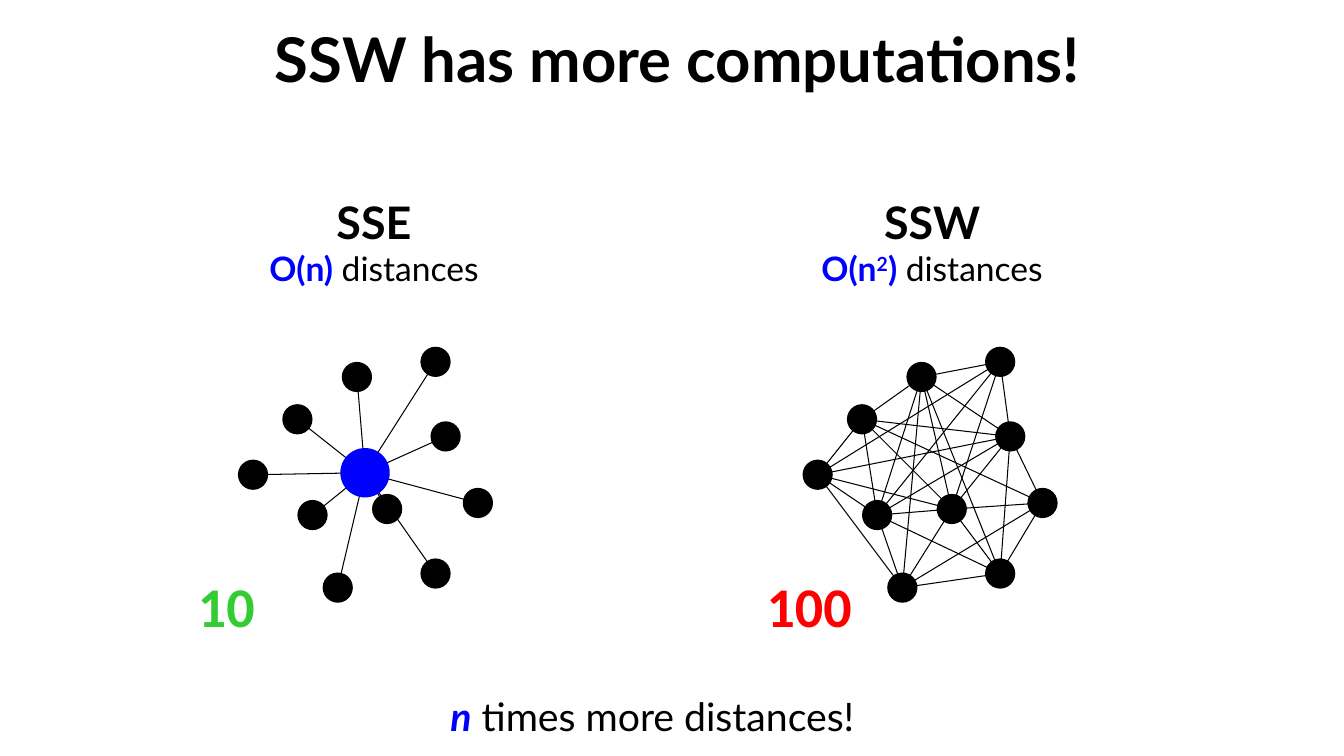
from dataclasses import dataclass

import lxml.etree
import pptx
import pptx.dml.color
import pptx.enum.shapes
import pptx.enum.text
import pptx.oxml.ns
import pptx.presentation
import pptx.shapes.autoshape
import pptx.slide
import pptx.text.text
import pptx.util

PX = 9144  # EMU in one px, 100 px to the inch

BLACK = pptx.dml.color.RGBColor(0x00, 0x00, 0x00)
BLUE = pptx.dml.color.RGBColor(0x00, 0x00, 0xFF)
GREEN = pptx.dml.color.RGBColor(0x33, 0xCC, 0x33)
RED = pptx.dml.color.RGBColor(0xFF, 0x00, 0x00)


@dataclass(frozen=True)
class Span:
    text: str
    size: int
    color: pptx.dml.color.RGBColor = BLACK
    bold: bool = True
    italic: bool = False
    superscript: bool = False
    font: str = "Lato"


@dataclass(frozen=True)
class Label:
    left: int
    top: int
    width: int
    height: int
    lines: tuple[tuple[Span, ...], ...]


@dataclass(frozen=True)
class Dot:
    x: int
    y: int
    size: int = 30
    color: pptx.dml.color.RGBColor = BLACK


@dataclass(frozen=True)
class Graph:
    shift: int
    dots: dict[str, Dot]
    links: dict[str, str]


TITLE = Label(43, 20, 1259, 74, ((Span("SSW has more computations!", 44),),))
DISTANCES = Span(" distances", 24, bold=False)
LABELS = (
    Label(248, 188, 246, 104, (
        (Span("SSE", 32),),
        (Span("O(n)", 24, BLUE), DISTANCES),
    )),
    Label(794, 188, 261, 104, (
        (Span("SSW", 32),),
        (Span("O(n", 24, BLUE), Span("2", 24, BLUE, superscript=True),
         Span(")", 24, BLUE), DISTANCES),
    )),
    Label(186, 562, 77, 77, ((Span("10", 40, GREEN, font="Calibri"),),)),
    Label(750, 562, 105, 77, ((Span("100", 40, RED, font="Calibri"),),)),
    Label(428, 682, 438, 57, (
        (Span("n", 28, BLUE, italic=True),
         Span(" times more distances!", 28, bold=False)),
    )),
)

POINTS = {
    "inner": Dot(384, 505),
    "upper": Dot(354, 374),
    "northwest": Dot(295, 416),
    "southwest": Dot(310, 511),
    "east": Dot(442, 433),
    "far_east": Dot(474, 499),
    "southeast": Dot(432, 569),
    "north": Dot(432, 359),
    "west": Dot(251, 471),
    "south": Dot(335, 583),
}
CENTROID = Dot(362, 469, 49, BLUE)
GRAPHS = (
    Graph(0, POINTS | {"centroid": CENTROID}, {"centroid": " ".join(POINTS)}),
    Graph(560, POINTS, {
        "north": "upper east southwest inner west",
        "upper": "northwest southwest inner east southeast south",
        "northwest": "west southwest inner east far_east",
        "west": "southwest south inner east",
        "southwest": "south southeast inner east",
        "inner": "south southeast east far_east",
        "east": "far_east southeast",
        "far_east": "southeast south",
        "southeast": "south",
    }),
)


def write_lines(frame: pptx.text.text.TextFrame, label: Label) -> None:
    for index, line in enumerate(label.lines):
        para = frame.add_paragraph() if index else frame.paragraphs[0]
        para.alignment = pptx.enum.text.PP_ALIGN.CENTER
        for span in line:
            run = para.add_run()
            run.text = span.text
            run.font.name = span.font
            run.font.size = pptx.util.Pt(span.size)
            run.font.bold = span.bold
            run.font.italic = span.italic
            run.font.color.rgb = span.color
            if span.superscript:
                run._r.get_or_add_rPr().set("baseline", "30000")


def add_title(page: pptx.slide.Slide, label: Label) -> None:
    title = page.shapes.title
    title.left, title.top = label.left * PX, label.top * PX
    title.width, title.height = label.width * PX, label.height * PX
    frame = title.text_frame
    frame.margin_left = frame.margin_right = 0
    frame.margin_top = frame.margin_bottom = 0
    frame.vertical_anchor = pptx.enum.text.MSO_ANCHOR.MIDDLE
    frame.auto_size = pptx.enum.text.MSO_AUTO_SIZE.SHAPE_TO_FIT_TEXT
    write_lines(frame, label)


def add_label(page: pptx.slide.Slide, label: Label) -> None:
    box = page.shapes.add_textbox(
        label.left * PX, label.top * PX, label.width * PX, label.height * PX)
    box.text_frame.word_wrap = False
    box.text_frame.auto_size = pptx.enum.text.MSO_AUTO_SIZE.SHAPE_TO_FIT_TEXT
    write_lines(box.text_frame, label)


def add_link(page: pptx.slide.Slide, start: Dot, end: Dot, shift: int) -> None:
    link = page.shapes.add_connector(
        pptx.enum.shapes.MSO_CONNECTOR.STRAIGHT,
        (start.x + shift) * PX, start.y * PX,
        (end.x + shift) * PX, end.y * PX)
    link.line.color.rgb = BLACK
    link.line.width = pptx.util.Pt(0.75)
    properties = link._element.spPr
    lxml.etree.SubElement(properties, pptx.oxml.ns.qn("a:effectLst"))


def add_dot(page: pptx.slide.Slide, dot: Dot, shift: int) -> None:
    size = dot.size * PX
    circle = page.shapes.add_shape(
        pptx.enum.shapes.MSO_SHAPE.OVAL,
        (dot.x + shift) * PX - size // 2, dot.y * PX - size // 2, size, size)
    circle.shadow.inherit = False
    circle.fill.solid()
    circle.fill.fore_color.rgb = dot.color
    circle.line.fill.background()


def add_graph(page: pptx.slide.Slide, graph: Graph) -> None:
    """Draw the links first, so that the dots cover their ends."""
    for start, ends in graph.links.items():
        for end in ends.split():
            add_link(page, graph.dots[start], graph.dots[end], graph.shift)
    for dot in graph.dots.values():
        add_dot(page, dot, graph.shift)


def main() -> None:
    deck = pptx.Presentation()
    deck.slide_width, deck.slide_height = 1333 * PX, 750 * PX
    page = deck.slides.add_slide(deck.slide_layouts.get_by_name("Title Only"))
    add_title(page, TITLE)
    for graph in GRAPHS:
        add_graph(page, graph)
    for label in LABELS:
        add_label(page, label)
    deck.save("out.pptx")


if __name__ == "__main__":
    main()
